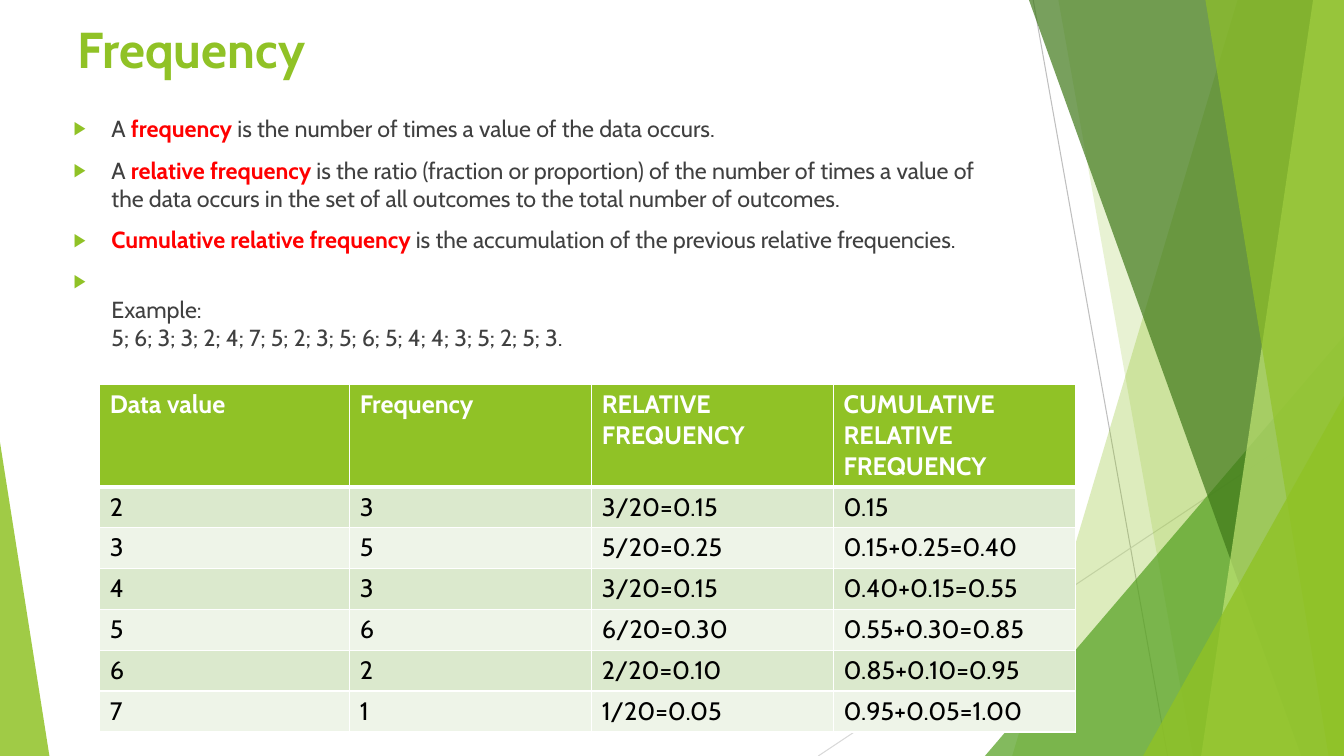
from copy import deepcopy

from lxml import etree
from pptx import Presentation
from pptx import util as u
from pptx.dml.color import RGBColor
from pptx.enum import shapes, text
from pptx.oxml import ns

GREEN = RGBColor(0x90, 0xC2, 0x26)
MID_GREEN = RGBColor(0x54, 0xA0, 0x21)
DARK_GREEN = RGBColor(0x3F, 0x78, 0x19)
LIGHT_GREEN = RGBColor(0xC0, 0xE4, 0x74)
BAND_DARK = RGBColor(0xDB, 0xE9, 0xCD)
BAND_LIGHT = RGBColor(0xEE, 0xF4, 0xE8)
RED = RGBColor(0xFF, 0x00, 0x00)
GRAY = RGBColor(0x40, 0x40, 0x40)
LINE_GRAY = RGBColor(0xBF, 0xBF, 0xBF)
PALE_GRAY = RGBColor(0xD9, 0xD9, 0xD9)
WHITE = RGBColor(0xFF, 0xFF, 0xFF)
BLACK = RGBColor(0x00, 0x00, 0x00)

WIDTH, HEIGHT = 960, 540

DEFINITIONS = [
    [("A ", False), ("frequency", True),
     (" is the number of times a value of the data occurs.", False)],
    [("A ", False), ("relative frequency ", True),
     ("is the ratio (fraction or proportion) of the number of times a value of "
      "the data occurs in the set of all outcomes to the total number of outcomes.", False)],
    [("Cumulative relative frequency ", True),
     ("is the accumulation of the previous relative frequencies.", False)],
    [("\nExample:\n5; 6; 3; 3; 2; 4; 7; 5; 2; 3; 5; 6; 5; 4; 4; 3; 5; 2; 5; 3.", False)],
]

FREQUENCY_ROWS = [
    ("Data value", "Frequency", "RELATIVE FREQUENCY", "CUMULATIVE RELATIVE FREQUENCY"),
    ("2", "3", "3/20=0.15", "0.15"),
    ("3", "5", "5/20=0.25", "0.15+0.25=0.40"),
    ("4", "3", "3/20=0.15", "0.40+0.15=0.55"),
    ("5", "6", "6/20=0.30", "0.55+0.30=0.85"),
    ("6", "2", "2/20=0.10", "0.85+0.10=0.95"),
    ("7", "1", "1/20=0.05", "0.95+0.05=1.00"),
]


def apply(target, values):
    for name, value in values.items():
        setattr(target, name, value)


def add_xml(parent, tag, **attributes):
    return etree.SubElement(parent, ns.qn(tag), attributes)


class SlideBuilder:
    font_name = "Cabin"

    def __init__(self, slide):
        self.slide = slide

    def line(self, start, end, color):
        points = [u.Pt(value) for value in (*start, *end)]
        connector = self.slide.shapes.add_connector(shapes.MSO_CONNECTOR.STRAIGHT, *points)
        connector.line.color.rgb = color
        connector.line.width = u.Pt(0.75)
        add_xml(connector._element.spPr, "a:effectLst")

    def paint(self, shape, color, opacity):
        shape.shadow.inherit = False
        shape.line.fill.background()
        shape.fill.solid()
        shape.fill.fore_color.rgb = color
        swatch = shape._element.spPr.find(".//" + ns.qn("a:srgbClr"))
        add_xml(swatch, "a:alpha", val=str(opacity * 1000))

    def panel(self, top_x, bottom_x, color, opacity):
        outline = self.slide.shapes.build_freeform(u.Pt(top_x), 0)
        corners = [(WIDTH, 0), (WIDTH, HEIGHT), (bottom_x, HEIGHT)]
        outline.add_line_segments([(u.Pt(x), u.Pt(y)) for x, y in corners], close=True)
        self.paint(outline.convert_to_shape(), color, opacity)

    def triangle(self, left, top, right, apex, color, opacity):
        box = [u.Pt(value) for value in (left, top, right - left, HEIGHT - top)]
        shape = self.slide.shapes.add_shape(shapes.MSO_SHAPE.ISOSCELES_TRIANGLE, *box)
        shape.adjustments[0] = apex
        self.paint(shape, color, opacity)

    def run(self, paragraph, words, size, color, bold=False):
        run = paragraph.add_run()
        run.text = words
        apply(run.font, {"name": self.font_name, "size": u.Pt(size), "bold": bold})
        run.font.color.rgb = color
        return run

    def placeholder(self, index, left, top, width, height):
        shape = self.slide.placeholders[index]
        apply(shape, {"left": u.Pt(left), "top": u.Pt(top),
                      "width": u.Pt(width), "height": u.Pt(height)})
        apply(shape.text_frame, {"word_wrap": True, "auto_size": text.MSO_AUTO_SIZE.NONE,
                                 "vertical_anchor": text.MSO_ANCHOR.TOP})
        self.slide.shapes._spTree.append(shape._element)
        return shape.text_frame

    def title(self, words, box):
        paragraph = self.placeholder(0, *box).paragraphs[0]
        paragraph.alignment = text.PP_ALIGN.LEFT
        self.run(paragraph, words, 36, GREEN, True)

    def bullet(self, paragraph):
        apply(paragraph, {"space_before": u.Pt(10), "alignment": text.PP_ALIGN.LEFT})
        properties = paragraph._p.get_or_add_pPr()
        properties.set("marL", str(u.Pt(27)))
        properties.set("indent", str(-u.Pt(27)))
        add_xml(add_xml(properties, "a:buClr"), "a:srgbClr", val=str(GREEN))
        add_xml(properties, "a:buSzPct", val="80000")
        add_xml(properties, "a:buChar", char="▶")

    def bullets(self, items, box):
        frame = self.placeholder(1, *box)
        for index, item in enumerate(items):
            paragraph = frame.add_paragraph() if index else frame.paragraphs[0]
            self.bullet(paragraph)
            for words, is_term in item:
                for number, part in enumerate(words.split("\n")):
                    if number:
                        paragraph.add_line_break()
                    if part:
                        run = self.run(paragraph, part, 16.6, RED if is_term else GRAY, is_term)
            for line_break in paragraph._p.findall(ns.qn("a:br")):
                line_break.append(deepcopy(run._r.rPr))

    def borders(self, cell, widths):
        properties = cell._tc.get_or_add_tcPr()
        for position, (side, width) in enumerate(widths.items()):
            border = etree.Element(ns.qn("a:ln" + side), w=str(u.Pt(width)))
            add_xml(add_xml(border, "a:solidFill"), "a:srgbClr", val=str(WHITE))
            properties.insert(position, border)

    def table(self, rows, box, column_widths, row_heights):
        frame = self.slide.shapes.add_table(len(rows), len(rows[0]), *[u.Pt(v) for v in box])
        table = frame.table
        for column, width in zip(table.columns, column_widths):
            column.width = u.Pt(width)
        for row, height in zip(table.rows, row_heights):
            row.height = u.Pt(height)
        for row_index, values in enumerate(rows):
            header = row_index == 0
            fill = GREEN if header else (BAND_LIGHT, BAND_DARK)[row_index % 2]
            for column_index, words in enumerate(values):
                cell = table.cell(row_index, column_index)
                cell.fill.solid()
                cell.fill.fore_color.rgb = fill
                self.borders(cell, {"L": 1, "R": 1, "T": 3 if row_index == 1 else 1,
                                    "B": 3 if header else 1})
                self.run(cell.text_frame.paragraphs[0], words, 18,
                         WHITE if header else BLACK, header)


def main():
    presentation = Presentation()
    apply(presentation, {"slide_width": u.Pt(WIDTH), "slide_height": u.Pt(HEIGHT)})
    builder = SlideBuilder(presentation.slides.add_slide(presentation.slide_layouts[1]))

    builder.line((738, 0), (834, HEIGHT), LINE_GRAY)
    builder.line((WIDTH, 290), (584.5, HEIGHT), PALE_GRAY)
    builder.panel(884, 723, GREEN, 30)
    builder.panel(756, 852, GREEN, 20)
    builder.triangle(703.5, 240, WIDTH, 1, MID_GREEN, 72)
    builder.panel(735, 929.5, DARK_GREEN, 70)
    builder.panel(938, 858, LIGHT_GREEN, 70)
    builder.panel(861, 949, GREEN, 65)
    builder.triangle(816.5, 283, WIDTH, 1, GREEN, 80)
    builder.triangle(0, 316, 35.3, 0, GREEN, 85)

    builder.title("Frequency", (48.3, 9.4, 677, 69))
    builder.bullets(DEFINITIONS, (45.4, 77.8, 677, 219.6))
    builder.table(FREQUENCY_ROWS, (71.3, 274.5, 697, 244.8),
                  [178.6] + [172.8] * 3, [52.6] + [27.4] * 6)
    presentation.save("out.pptx")


if __name__ == "__main__":
    main()
